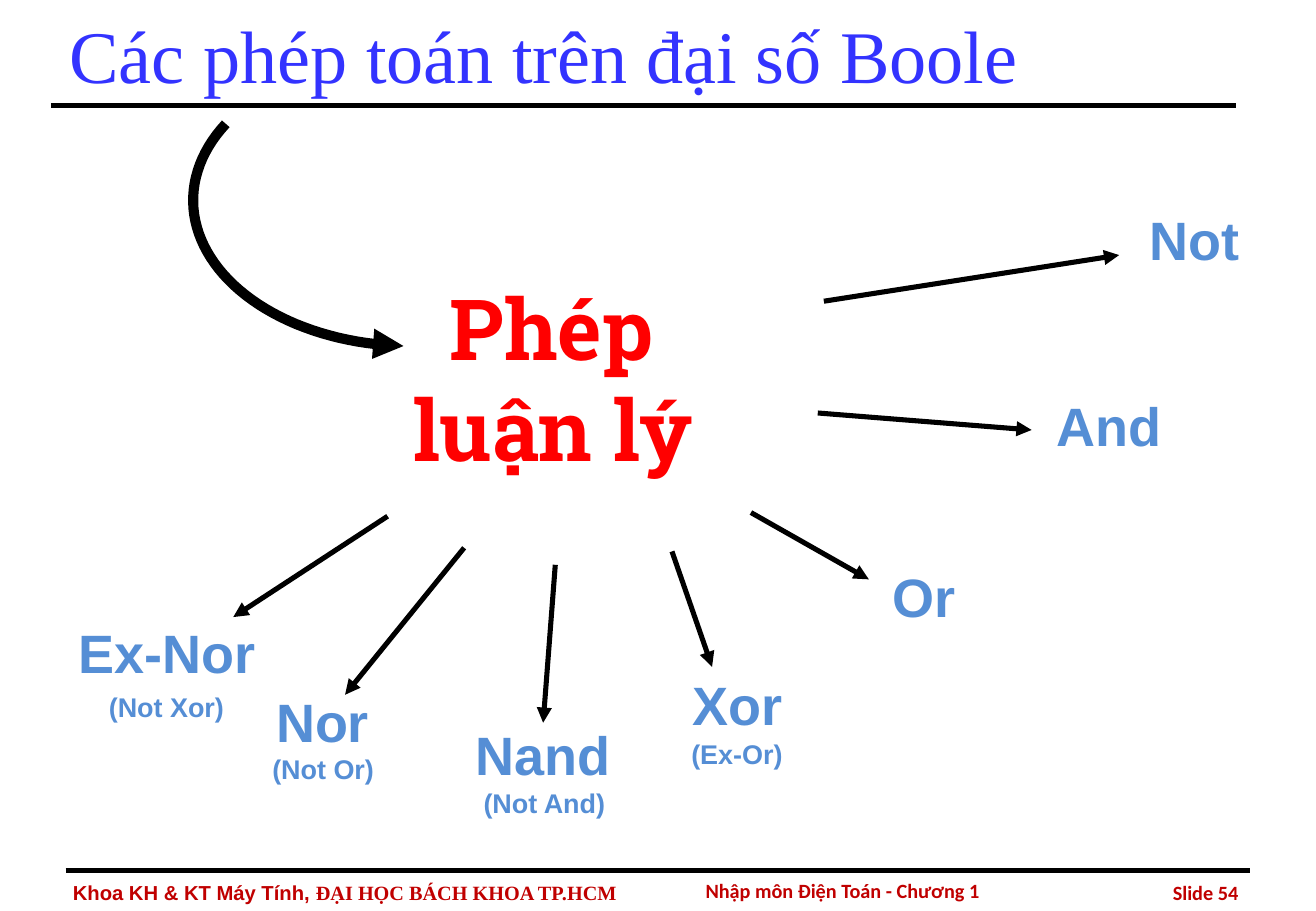
from dataclasses import dataclass
from math import cos, radians, sin

from lxml import etree
from pptx import Presentation
from pptx.dml.color import RGBColor
from pptx.enum.shapes import MSO_CONNECTOR
from pptx.enum.text import MSO_ANCHOR, PP_ALIGN
from pptx.oxml.ns import qn
from pptx.util import Pt

PX = 9144  # EMU per px, 100 px to the inch
LEFT, MID, RIGHT = PP_ALIGN.LEFT, PP_ALIGN.CENTER, PP_ALIGN.RIGHT
TOP, CENTER = MSO_ANCHOR.TOP, MSO_ANCHOR.MIDDLE
STRAIGHT = MSO_CONNECTOR.STRAIGHT
BLACK, BLUE, SKY, RED, WINE = "000000", "3333FF", "558ED5", "FF0000", "C00000"
TITLE_ONLY = 5


@dataclass
class Style:
    size: int
    font: str
    color: str
    bold: bool = True
    align: int = MID
    anchor: int = CENTER
    inset: int = 4


@dataclass
class Label:
    text: str
    x: int
    y: int
    w: int
    h: int
    style: Style


@dataclass
class Line:
    x1: int
    y1: int
    x2: int
    y2: int
    arrow: bool = True


NAME = Style(32, "Arial", SKY, anchor=TOP)
NOTE = Style(16, "Arial", SKY)
HUB = Style(50, "Roboto Slab", RED, inset=5)
HEAD = Style(44, "Times New Roman", BLUE, bold=False, align=LEFT, inset=10)
DEPT = Style(12, "Arial", WINE, align=LEFT, inset=10)
COURSE = Style(12, "Calibri", WINE, inset=10)
PAGE = Style(12, "Calibri", WINE, align=RIGHT, inset=10)

LABELS = [
    Label("Nhập môn Điện Toán - Chương 1", 522, 716, 343, 34, COURSE),
    Label("Slide 54", 889, 719, 140, 31, PAGE),
    Label("Phép\nluận lý", 265, 222, 378, 177, HUB),
    Label("Not", 921, 166, 124, 63, NAME),
    Label("And", 842, 319, 141, 63, NAME),
    Label("Or", 716, 460, 89, 63, NAME),
    Label("Xor", 543, 549, 128, 63, NAME),
    Label("Nand", 362, 590, 170, 63, NAME),
    Label("Nor", 195, 563, 141, 63, NAME),
    Label("Ex-Nor", 38, 506, 199, 63, NAME),
    Label("(Ex-Or)", 548, 603, 117, 35, NOTE),
    Label("(Not And)", 363, 643, 170, 35, NOTE),
    Label("(Not Or)", 181, 615, 170, 35, NOTE),
    Label("(Not Xor)", 52, 564, 170, 35, NOTE),
]

LINES = [
    Line(54, 717, 1029, 717, False),
    Line(42, 87, 1017, 87, False),
    Line(678, 248, 921, 210),
    Line(673, 340, 849, 354),
    Line(618, 422, 715, 477),
    Line(553, 454, 586, 549),
    Line(457, 465, 447, 595),
    Line(382, 451, 284, 572),
    Line(319, 425, 192, 508),
]


def px(value: float) -> int:
    return round(value * PX)


def rgb(code: str) -> RGBColor:
    return RGBColor.from_string(code)


def write(shape, text: str, style: Style) -> None:
    frame = shape.text_frame
    frame.text = text
    frame.word_wrap = True
    frame.vertical_anchor = style.anchor
    frame.margin_left = frame.margin_right = px(style.inset)
    frame.margin_top = frame.margin_bottom = px(min(style.inset, 5))
    for para in frame.paragraphs:
        para.alignment = style.align
        for run in para.runs:
            paint(run, style)


def paint(run, style: Style) -> None:
    font = run.font
    font.size, font.name, font.bold = Pt(style.size), style.font, style.bold
    font.color.rgb = rgb(style.color)


def add_label(slide, label: Label):
    box = slide.shapes.add_textbox(*map(px, (label.x, label.y, label.w, label.h)))
    write(box, label.text, label.style)
    return box


def stroke(shape, width: int, arrow: bool) -> None:
    shape.line.width = Pt(width)
    shape.line.color.rgb = rgb(BLACK)
    if arrow:
        edge = shape._element.spPr.find(qn("a:ln"))
        etree.SubElement(edge, qn("a:tailEnd"), type="triangle")


def add_line(slide, line: Line) -> None:
    ends = map(px, (line.x1, line.y1, line.x2, line.y2))
    link = slide.shapes.add_connector(STRAIGHT, *ends)
    stroke(link, 3, line.arrow)
    etree.SubElement(link._element.spPr, qn("a:effectLst"))


def add_curve(slide) -> None:
    # Part of an ellipse, from the title down to the hub
    steps, start, end = 48, -31.7, 87.8
    turns = [radians(start + (end - start) * i / steps) for i in range(steps + 1)]
    points = [(px(339 - 180 * cos(t)), px(165 + 120 * sin(t))) for t in turns]
    path = slide.shapes.build_freeform(*points[0])
    path.add_line_segments(points[1:], close=False)
    curve = path.convert_to_shape()
    curve.shadow.inherit = False
    curve.fill.background()
    stroke(curve, 6, True)


def main() -> None:
    deck = Presentation()
    deck.slide_width, deck.slide_height = px(1083), px(750)
    slide = deck.slides.add_slide(deck.slide_layouts[TITLE_ONLY])

    # Title
    title = slide.shapes.title
    title.left, title.top, title.width, title.height = map(px, (47, 0, 975, 88))
    write(title, "Các phép toán trên đại số Boole", HEAD)

    # Rules and arrows
    for line in LINES:
        add_line(slide, line)
    add_curve(slide)

    # Hub, operations and footer
    for label in LABELS:
        add_label(slide, label)

    # Footer with two fonts
    dept = add_label(slide, Label("Khoa KH & KT Máy Tính, ", 0, 720, 607, 30, DEPT))
    dept.text_frame.margin_left = px(60)
    school = dept.text_frame.paragraphs[0].add_run()
    school.text = "ĐẠI HỌC BÁCH KHOA TP.HCM"
    paint(school, Style(12, "Times New Roman", WINE))

    deck.save("out.pptx")


if __name__ == "__main__":
    main()
